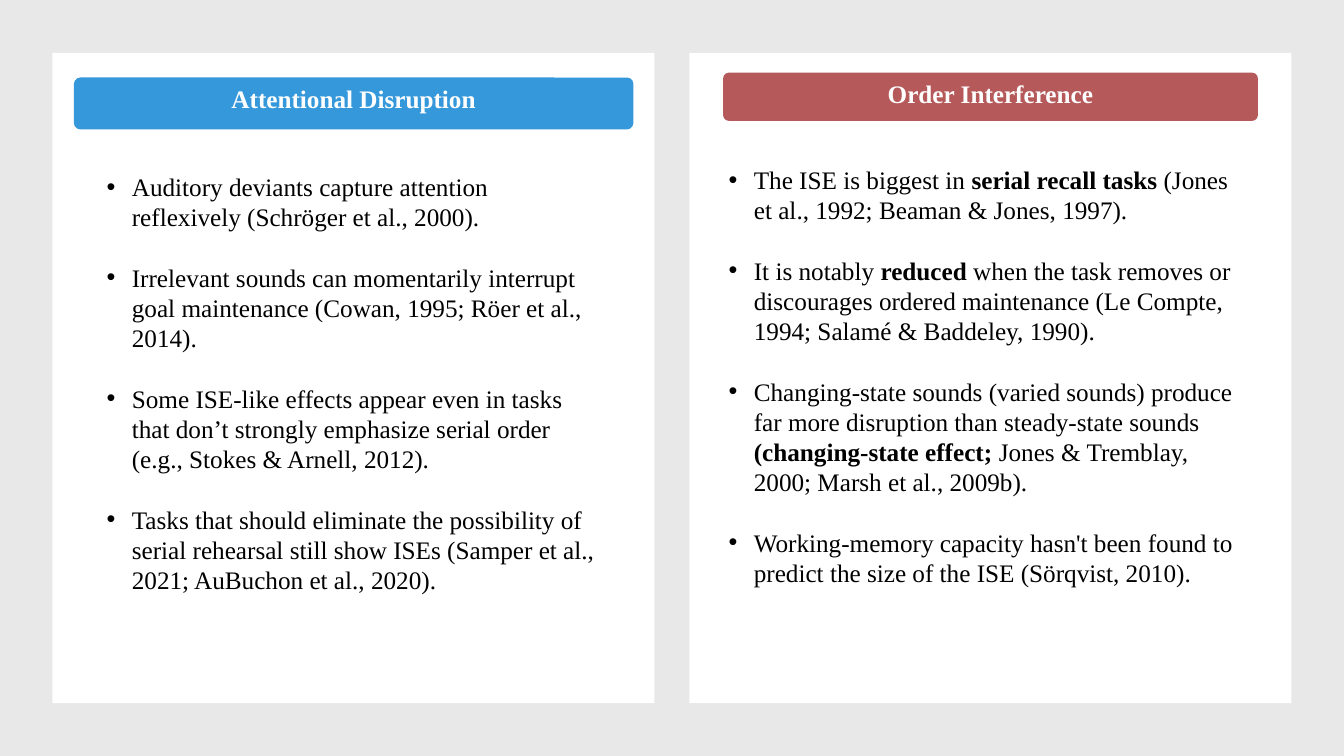
from lxml import etree
from pptx import Presentation
from pptx.dml.color import RGBColor
from pptx.enum.shapes import MSO_SHAPE
from pptx.enum.text import MSO_ANCHOR, PP_ALIGN
from pptx.oxml.ns import qn
from pptx.util import Inches, Pt

RECT, ROUNDED = MSO_SHAPE.RECTANGLE, MSO_SHAPE.ROUNDED_RECTANGLE
TOP = MSO_ANCHOR.TOP
CENTER = PP_ALIGN.CENTER
WIDTH, HEIGHT = Inches(13.33), Inches(7.5)
FONT = "Times New Roman"
COLORS = {
    "backdrop": "E8E8E8",
    "panel": "FFFFFF",
    "attention": "3498DB",
    "order": "B5595A",
    "heading": "FFFFFF",
    "body": "000000",
}
MARGIN_X, MARGIN_Y, GAP = 3.9, 7, 2.6
PANEL_W = (100 - 2 * MARGIN_X - GAP) / 2
PANEL_H = 100 - 2 * MARGIN_Y

COLUMNS = [
    {
        "heading": "Attentional Disruption",
        "color": "attention",
        "bar": (5.5, 10.25, 41.63, 6.87),
        "body": (7.2, 22, 38.1, 66),
        "points": [
            "Auditory deviants capture attention reflexively (Schröger et al., 2000).",
            "Irrelevant sounds can momentarily interrupt goal maintenance (Cowan, 1995; "
            "Röer et al., 2014).",
            "Some ISE-like effects appear even in tasks that don’t strongly emphasize "
            "serial order (e.g., Stokes & Arnell, 2012).",
            "Tasks that should eliminate the possibility of serial rehearsal still show "
            "ISEs (Samper et al., 2021; AuBuchon et al., 2020).",
        ],
    },
    {
        "heading": "Order Interference",
        "color": "order",
        "bar": (53.8, 9.6, 39.8, 6.4),
        "body": (53.48, 21.07, 39.07, 66),
        "points": [
            "The ISE is biggest in *serial recall tasks* (Jones et al., 1992; "
            "Beaman & Jones, 1997).",
            "It is notably *reduced* when the task removes or discourages ordered "
            "maintenance (Le Compte, 1994; Salamé & Baddeley, 1990).",
            "Changing-state sounds (varied sounds) produce far more disruption than "
            "steady-state sounds *(changing-state effect; *Jones & Tremblay, 2000; "
            "Marsh et al., 2009b).",
            "Working-memory capacity hasn't been found to predict the size of the ISE "
            "(Sörqvist, 2010).",
        ],
    },
]


def rgb(name):
    return RGBColor.from_string(COLORS[name])


def place(x, y, w, h):
    return [int(size * share / 100) for size, share in
            zip((WIDTH, HEIGHT, WIDTH, HEIGHT), (x, y, w, h))]


def apply(obj, values):
    for name, value in values.items():
        setattr(obj, name, value)


def add_run(p, text, color, bold):
    r = p.add_run()
    r.text = text
    apply(r.font, {"name": FONT, "size": Pt(18), "bold": bold})
    r.font.color.rgb = rgb(color)


def add_block(s, kind, box, color):
    sp = s.shapes.add_shape(kind, *place(*box))
    sp.shadow.inherit = False
    sp.fill.solid()
    sp.fill.fore_color.rgb = rgb(color)
    sp.line.fill.background()
    return sp


def add_heading(s, box, color, text):
    sp = add_block(s, ROUNDED, box, color)
    sp.adjustments[0] = 0.125
    tf = sp.text_frame
    apply(tf, {"vertical_anchor": TOP, "margin_top": Inches(0.13), "margin_bottom": 0,
               "margin_left": 0, "margin_right": 0})
    p = tf.paragraphs[0]
    apply(p, {"alignment": CENTER, "line_spacing": Pt(15)})
    add_run(p, text, "heading", True)


def set_bullet(p):
    pPr = p._p.get_or_add_pPr()
    pPr.set("marL", str(Inches(0.25)))
    pPr.set("indent", str(-Inches(0.25)))
    etree.SubElement(pPr, qn("a:buFont")).set("typeface", "Arial")
    etree.SubElement(pPr, qn("a:buChar")).set("char", "•")


def add_points(s, box, points):
    tf = s.shapes.add_textbox(*place(*box)).text_frame
    tf.word_wrap = True
    for i, point in enumerate(points):
        p = tf.add_paragraph() if i else tf.paragraphs[0]
        p.space_before = Pt(21.6 if i else 0)
        set_bullet(p)
        for j, part in enumerate(point.split("*")):
            add_run(p, part, "body", j % 2 == 1)


def main():
    prs = Presentation()
    apply(prs, {"slide_width": WIDTH, "slide_height": HEIGHT})
    s = prs.slides.add_slide(prs.slide_layouts[6])
    s.background.fill.solid()
    s.background.fill.fore_color.rgb = rgb("backdrop")
    for i, column in enumerate(COLUMNS):
        x = MARGIN_X + i * (PANEL_W + GAP)
        add_block(s, RECT, (x, MARGIN_Y, PANEL_W, PANEL_H), "panel")
        add_heading(s, column["bar"], column["color"], column["heading"])
        add_points(s, column["body"], column["points"])
    prs.save("out.pptx")


if __name__ == "__main__":
    main()
